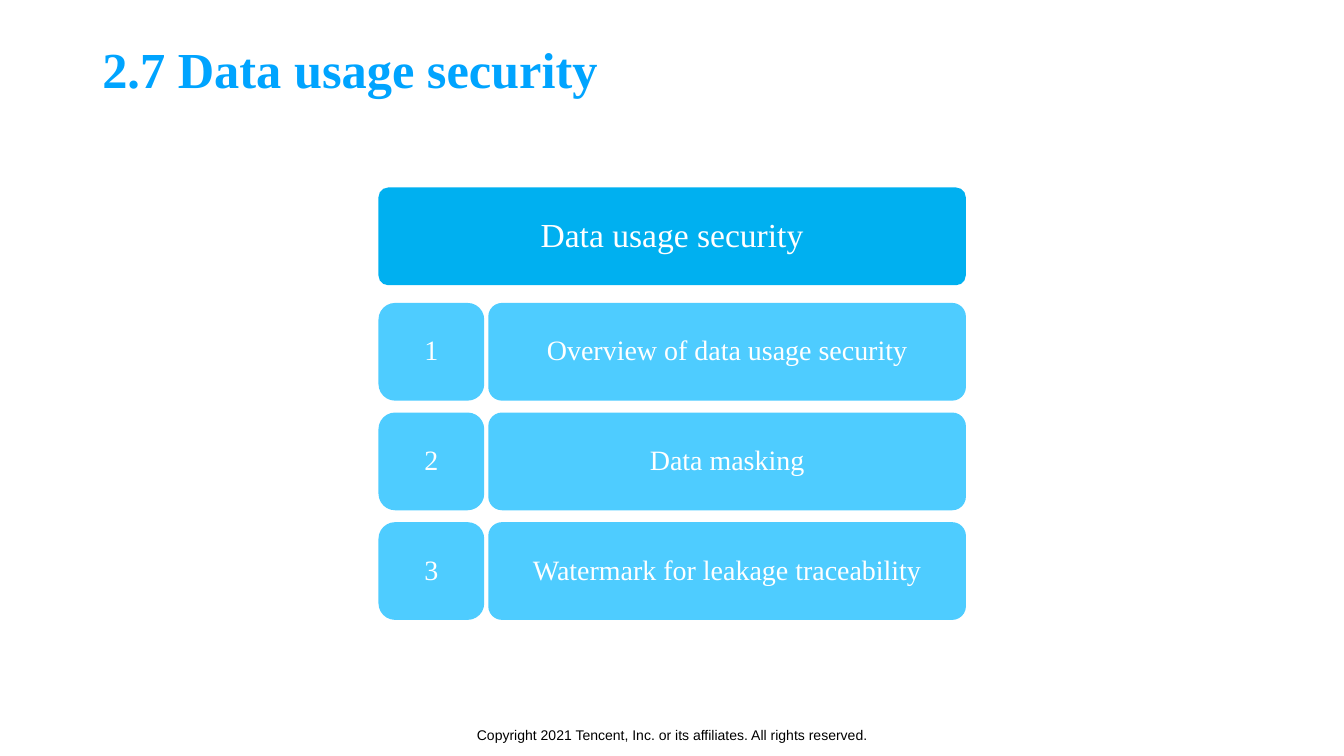
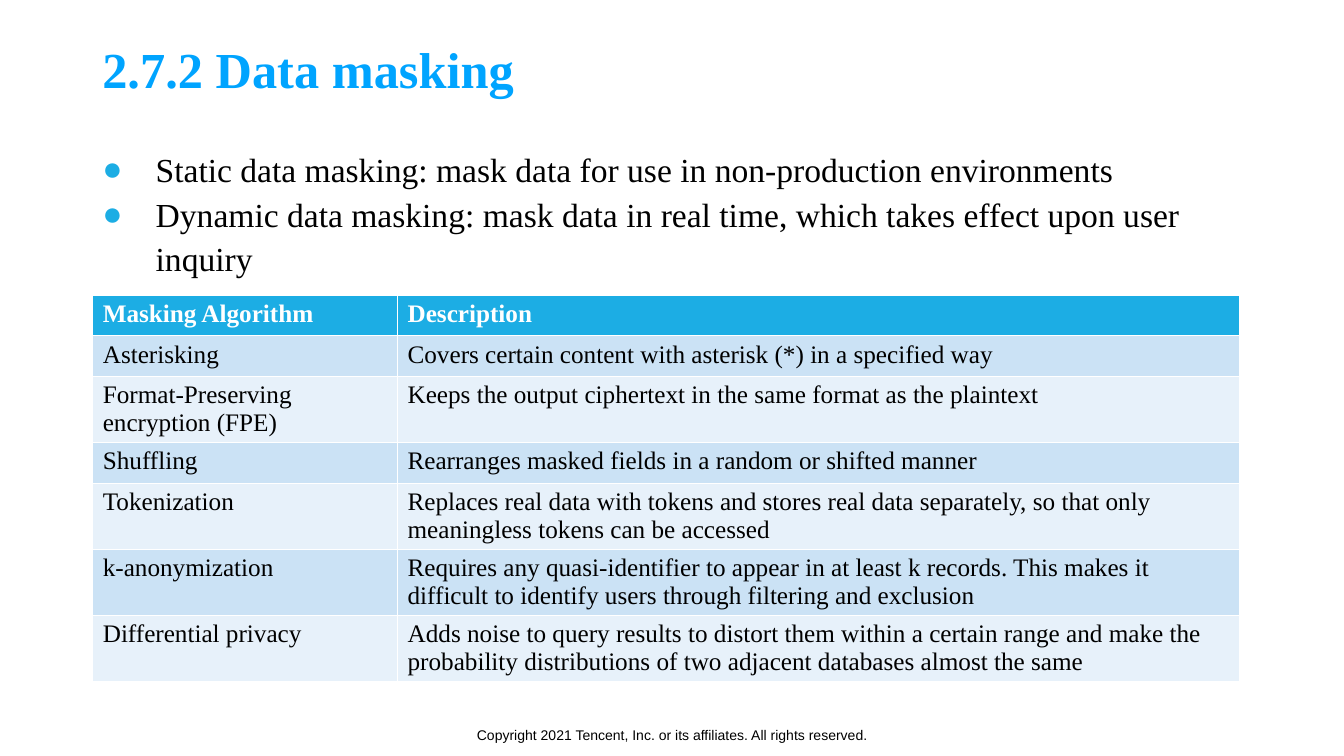
from lxml import etree
from pptx import Presentation
from pptx.dml.color import RGBColor
from pptx.enum.shapes import MSO_SHAPE as Kind
from pptx.enum.text import MSO_ANCHOR as Anchor, MSO_AUTO_SIZE as Fit, PP_ALIGN as Align
from pptx.oxml.ns import qn
from pptx.util import Inches, Pt

WIDE, HIGH = Inches(26.67), Inches(15)
SERIF, SANS = "Times New Roman", "Arial"
WHITE, BLACK, BLUE = "FFFFFF", "000000", "00A4FF"
DEEP, LIGHT, ACCENT = "00B0F0", "4ECCFF", "1CADE4"
BANDS = ["E7F1FA", "CBE2F5"]
hue = RGBColor.from_string


def place(x, y, w, h):
    """Turn percentages of the slide into left, top, width and height."""
    return [int(part * size / 100) for part, size in zip((x, y, w, h), (WIDE, HIGH) * 2)]


def write(frame, text, size, color, align=Align.LEFT, face=SERIF, bold=False,
          gap=1.0, pad=(0.2, 0.1), anchor=Anchor.MIDDLE):
    """Fill a text frame and format it; pad is the side and the top inset."""
    frame.text = text
    frame.word_wrap = True
    frame.auto_size = Fit.NONE
    frame.vertical_anchor = anchor
    frame.margin_left = frame.margin_right = Inches(pad[0])
    frame.margin_top = frame.margin_bottom = Inches(pad[1])
    for para in frame.paragraphs:
        para.alignment = align
        para.line_spacing = gap
        para.space_before = Pt(0)
        for run in para.runs:
            font = run.font
            font.name, font.size, font.bold = face, Pt(size), bold
            font.color.rgb = hue(color)


deck = Presentation()
deck.slide_width, deck.slide_height = WIDE, HIGH

# Shared title and footer
pages = []
for name in ["2.7 Data usage security", "2.7.2 Data masking"]:
    page = deck.slides.add_slide(deck.slide_layouts[5])
    title = page.shapes.title
    title.left, title.top, title.width, title.height = place(6.86, 6, 80.54, 7)
    write(title.text_frame, name, 72, BLUE, bold=True, gap=0.9)
    foot = page.shapes.add_textbox(*place(30.52, 94.53, 39, 5.33))
    write(foot.text_frame, "Copyright 2021 Tencent, Inc. or its affiliates. All rights reserved.",
          20, BLACK, Align.CENTER, SANS)
    pages.append(page)
agenda, masking = pages

# Agenda: a heading above numbered rows
LEFT, BOX, STEP = 28.16, 12.93, 14.5
tiles = [("Data usage security", LEFT, 24.8, 43.7, 0.1, DEEP, 48, (0.16, 0.12))]
topics = ["Overview of data usage security", "Data masking", "Watermark for leakage traceability"]
for i, topic in enumerate(topics):
    top = 40.07 + i * STEP
    tiles.append((str(i + 1), LEFT, top, 7.87, 0.17, LIGHT, 40, (0.38, 0.38)))
    tiles.append((topic, 36.33, top, 35.54, 0.14, LIGHT, 40, (0.38, 0.38)))

for text, x, y, w, curve, fill, size, pad in tiles:
    tile = agenda.shapes.add_shape(Kind.ROUNDED_RECTANGLE, *place(x, y, w, BOX))
    tile.adjustments[0] = curve
    tile.shadow.inherit = False
    tile.fill.solid()
    tile.fill.fore_color.rgb = hue(fill)
    tile.line.fill.background()
    write(tile.text_frame, text, size, WHITE, Align.CENTER, gap=0.9, pad=pad)

# Masking: two bullets
points = [
    "Static data masking: mask data for use in non-production environments",
    "Dynamic data masking: mask data in real time, which takes effect upon user inquiry",
]
body = masking.shapes.add_textbox(*place(6.86, 18.53, 87.44, 73.47))
write(body.text_frame, "\n".join(points), 48, BLACK, gap=1.1, anchor=Anchor.TOP)
for para in body.text_frame.paragraphs:
    props = para._p.get_or_add_pPr()
    props.set("marL", str(Inches(1.06)))
    props.set("indent", str(-Inches(1.06)))
    tint = etree.SubElement(props, qn("a:buClr"))
    etree.SubElement(tint, qn("a:srgbClr"), val=ACCENT)
    etree.SubElement(props, qn("a:buFont"), typeface=SANS)
    etree.SubElement(props, qn("a:buChar"), char="●")

# Masking: table of algorithms
rows = [
    ("Masking Algorithm", "Description"),
    ("Asterisking", "Covers certain content with asterisk (*) in a specified way"),
    ("Format-Preserving encryption (FPE)",
     "Keeps the output ciphertext in the same format as the plaintext"),
    ("Shuffling", "Rearranges masked fields in a random or shifted manner"),
    ("Tokenization", "Replaces real data with tokens and stores real data separately, "
     "so that only meaningless tokens can be accessed"),
    ("k-anonymization", "Requires any quasi-identifier to appear in at least k records. "
     "This makes it difficult to identify users through filtering and exclusion"),
    ("Differential privacy", "Adds noise to query results to distort them within a certain range "
     "and make the probability distributions of two adjacent databases almost the same"),
]
ONE, TWO = 5.4, 8.73
heights = [ONE, ONE, TWO, ONE, TWO, TWO, TWO]
grid = masking.shapes.add_table(len(rows), 2, *place(6.9, 39, 85.3, sum(heights))).table
for col, share in zip(grid.columns, (22.68, 62.62)):
    col.width = int(WIDE * share / 100)
for r, (row, high) in enumerate(zip(rows, heights)):
    head = r == 0
    grid.rows[r].height = int(HIGH * high / 100)
    for c, text in enumerate(row):
        cell = grid.cell(r, c)
        write(cell.text_frame, text, 36, WHITE if head else BLACK, bold=head, anchor=Anchor.TOP)
        cell.margin_left = cell.margin_right = Inches(0.2)
        cell.margin_top = cell.margin_bottom = Inches(0.1)
        cell.fill.solid()
        cell.fill.fore_color.rgb = hue(ACCENT if head else BANDS[r % 2])

deck.save("out.pptx")
